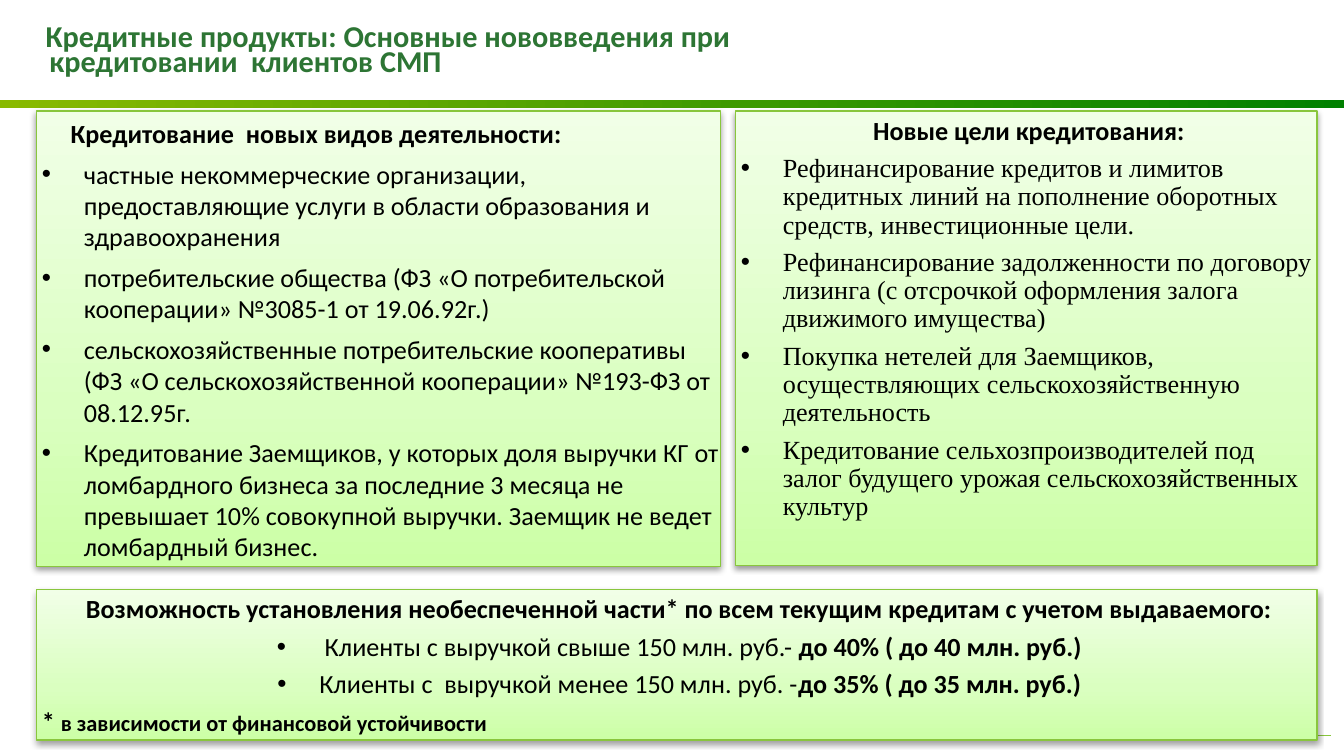
from lxml.etree import SubElement
from pptx import Presentation
from pptx.dml.color import RGBColor
from pptx.enum.shapes import MSO_CONNECTOR, MSO_SHAPE
from pptx.enum.text import MSO_ANCHOR as Anchor, MSO_AUTO_SIZE as AutoSize, PP_ALIGN as Align
from pptx.oxml.ns import qn
from pptx.util import Pt

COLORS = {
    "title": "2D7534", "text": "000000", "border": "89C63D", "shadow": "000000",
    "bar_start": "89BA00", "bar_end": "008000",
    "panel_bottom": "CCFFA6", "panel_middle": "DAFFC0", "panel_top": "F1FFE7",
}
SANS, SERIF = "Calibri", "Times New Roman"
LEFT, RIGHT, PANEL_TOP = 19.5, 705.5, 59.5
HANGING = 22.5

TITLE = ["Кредитные продукты: Основные нововведения при",
         "кредитовании\tклиентов СМП"]
ACTIVITIES = [
    "частные некоммерческие организации, предоставляющие услуги в области образования "
    "и здравоохранения",
    "потребительские общества (ФЗ «О потребительской кооперации» №3085-1 от 19.06.92г.)",
    "сельскохозяйственные потребительские кооперативы (ФЗ «О сельскохозяйственной "
    "кооперации» №193-ФЗ от 08.12.95г.",
    "Кредитование Заемщиков, у которых доля выручки КГ от ломбардного бизнеса за последние "
    "3 месяца не превышает 10% совокупной выручки. Заемщик не ведет ломбардный бизнес.",
]
PURPOSES = [
    "Рефинансирование кредитов и лимитов кредитных линий на пополнение оборотных средств, "
    "инвестиционные цели.",
    "Рефинансирование задолженности по договору лизинга (с отсрочкой оформления залога "
    "движимого имущества)",
    "Покупка нетелей для Заемщиков, осуществляющих сельскохозяйственную деятельность",
    "Кредитование сельхозпроизводителей под залог будущего урожая сельскохозяйственных культур",
]
LIMITS = [
    (" Клиенты с выручкой свыше 150 млн. руб.- ", "до 40% ( до 40 млн. руб.)"),
    ("Клиенты с  выручкой менее 150 млн. руб. -", "до 35% ( до 35 млн. руб.)"),
]


def set_all(target, **values):
    for name, value in values.items():
        setattr(target, name, value)


def rgb(name):
    return RGBColor.from_string(COLORS[name])


def add_color(parent, name):
    return SubElement(parent, qn("a:srgbClr"), val=COLORS[name])


def fill_gradient(shape, angle, stops):
    """Fill with (percent, colour name) stops; the angle runs counter-clockwise."""
    shape.fill.gradient()
    shape.fill.gradient_angle = angle
    stop_list = shape.element.spPr.find(".//" + qn("a:gsLst"))
    for stop in list(stop_list):
        stop_list.remove(stop)
    for percent, name in stops:
        add_color(SubElement(stop_list, qn("a:gs"), pos=str(percent * 1000)), name)


def add_soft_shadow(shape):
    effects = shape.element.spPr.find(qn("a:effectLst"))
    outer = SubElement(effects, qn("a:outerShdw"), blurRad=str(Pt(3.1)), dist=str(Pt(1.6)),
                       dir="5400000", rotWithShape="0")
    SubElement(add_color(outer, "shadow"), qn("a:alpha"), val="38000")


def add_span(para, text, size=14, bold=False, font=SANS, color="text"):
    span = para.add_run()
    span.text = text
    set_all(span.font, name=font, size=Pt(size), bold=bold)
    span.font.color.rgb = rgb(color)


def add_para(frame, spacing, align=Align.LEFT, bullet=False, indent=0):
    first = frame.paragraphs[0]
    para = first if not first.runs else frame.add_paragraph()
    set_all(para, alignment=align, line_spacing=spacing, space_before=Pt(0), space_after=Pt(4.9))
    properties = para._p.get_or_add_pPr()
    properties.set("marL", str(Pt(HANGING if bullet else indent)))
    properties.set("indent", str(Pt(-HANGING if bullet else 0)))
    if bullet:
        SubElement(properties, qn("a:buFont"), typeface="Arial")
        SubElement(properties, qn("a:buChar"), char="•")
    return para


def add_title(page, left, top, width, height):
    title = page.shapes.title
    set_all(title, left=Pt(left), top=Pt(top), width=Pt(width), height=Pt(height))
    frame = title.text_frame
    set_all(frame, margin_left=0, margin_right=0, margin_top=0, margin_bottom=0,
            word_wrap=True, auto_size=AutoSize.NONE, vertical_anchor=Anchor.MIDDLE)
    for number, text in enumerate(TITLE):
        para = add_para(frame, 0.7, indent=2 * number)
        para.space_after = Pt(0)
        if "\t" in text:
            tabs = SubElement(para._p.get_or_add_pPr(), qn("a:tabLst"))
            SubElement(tabs, qn("a:tab"), pos=str(Pt(136)), algn="l")
        add_span(para, text, 16.2, True, color="title")


def add_header_bar(page, left, top, width, height):
    bar = page.shapes.add_shape(MSO_SHAPE.RECTANGLE, Pt(left), Pt(top), Pt(width), Pt(height))
    fill_gradient(bar, 0, [(0, "bar_start"), (100, "bar_end")])
    bar.line.fill.background()
    bar.shadow.inherit = False


def add_footer_line(page, left, right, y):
    line = page.shapes.add_connector(MSO_CONNECTOR.STRAIGHT, Pt(left), Pt(y), Pt(right), Pt(y))
    line.line.color.rgb = rgb("border")
    line.line.width = Pt(0.75)
    SubElement(line._element.spPr, qn("a:effectLst"))


def add_panel(page, left, top, width, height):
    """Draw an empty green panel and return its text frame."""
    panel = page.shapes.add_shape(MSO_SHAPE.PENTAGON, Pt(left), Pt(top), Pt(width), Pt(height))
    panel.adjustments[0] = 0
    fill_gradient(panel, 90, [(0, "panel_bottom"), (35, "panel_middle"), (100, "panel_top")])
    panel.line.color.rgb = rgb("border")
    panel.line.width = Pt(0.75)
    panel.shadow.inherit = False
    add_soft_shadow(panel)
    frame = panel.text_frame
    set_all(frame, margin_left=Pt(2.9), margin_right=0, margin_top=Pt(3.5), margin_bottom=0,
            word_wrap=True, vertical_anchor=Anchor.TOP)
    return frame


def add_list_panel(page, box, heading, items, spacing, font=SANS, align=Align.LEFT, indent=0):
    frame = add_panel(page, *box)
    add_span(add_para(frame, spacing, align, indent=indent), heading, bold=True)
    for item in items:
        add_span(add_para(frame, spacing, bullet=True), item, font=font)


def add_limits_panel(page, box):
    frame = add_panel(page, *box)
    add_span(add_para(frame, 0.9, Align.CENTER), "Возможность установления необеспеченной части* "
             "по всем текущим кредитам с учетом выдаваемого:", bold=True)
    for clients, limit in LIMITS:
        para = add_para(frame, 0.9, Align.CENTER, bullet=True)
        add_span(para, clients)
        add_span(para, limit, bold=True)
    note = add_para(frame, 0.9)
    add_span(note, "* ", bold=True)
    add_span(note, "в зависимости от финансовой устойчивости", 12, True)


def main():
    deck = Presentation()
    set_all(deck, slide_width=Pt(720), slide_height=Pt(405))
    page = deck.slides.add_slide(deck.slide_layouts[5])
    add_header_bar(page, 0, 53.5, 720, 4.5)
    add_title(page, 24.5, 6.5, 545, 43)
    add_footer_line(page, 32.5, 713, 394)
    add_list_panel(page, (LEFT, PANEL_TOP, 366.5, 244), "Кредитование  новых видов деятельности:",
                   ACTIVITIES, 1.0, indent=15.5)
    add_list_panel(page, (394, PANEL_TOP, RIGHT - 394, 243.5), "Новые цели кредитования:",
                   PURPOSES, 0.9, SERIF, Align.CENTER)
    add_limits_panel(page, (LEFT, 316, RIGHT - LEFT, 80.5))
    deck.save("out.pptx")


if __name__ == "__main__":
    main()
